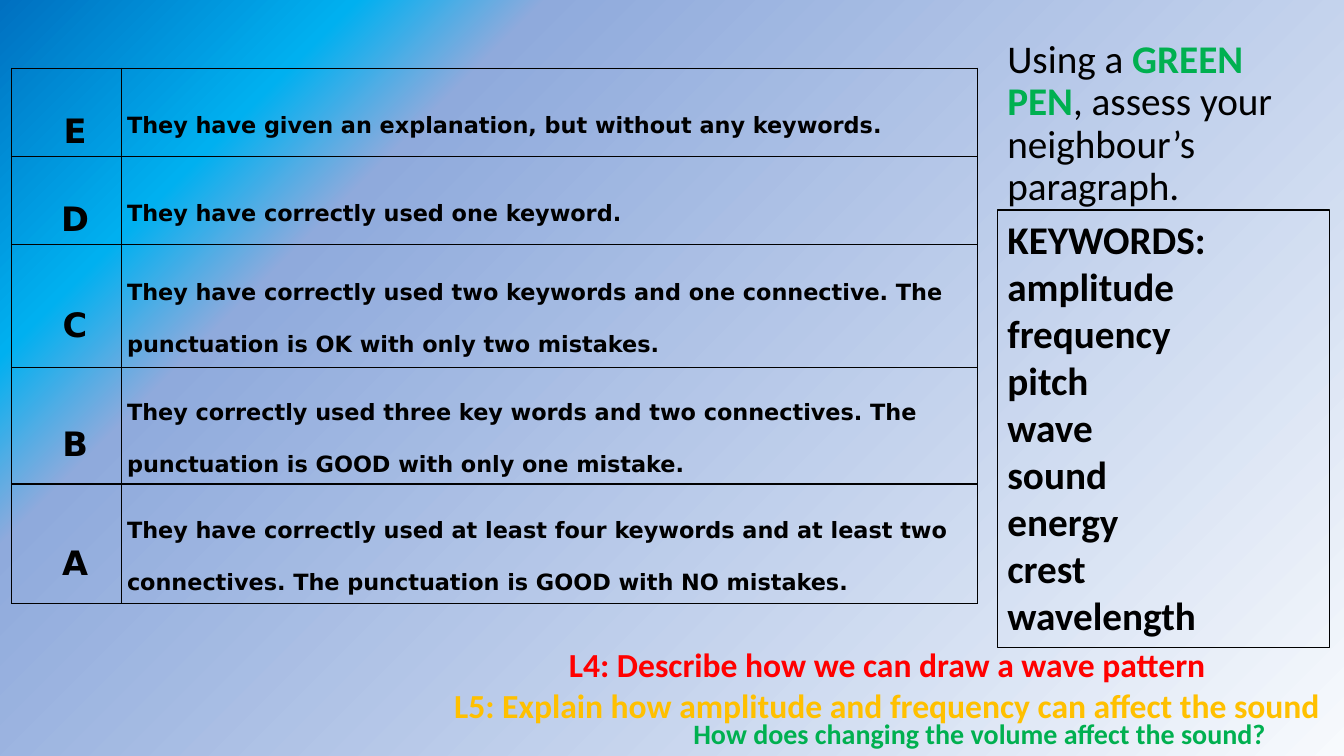
from dataclasses import dataclass

from pptx import Presentation
from pptx.dml.color import RGBColor
from pptx.enum.shapes import MSO_SHAPE
from pptx.enum.text import MSO_ANCHOR, PP_ALIGN
from pptx.oxml import parse_xml
from pptx.oxml.ns import nsdecls
from pptx.util import Pt

PX = 9525  # EMU per px, 96 px to the inch
LEFT, CENTER = PP_ALIGN.LEFT, PP_ALIGN.CENTER
TOP, MIDDLE = MSO_ANCHOR.TOP, MSO_ANCHOR.MIDDLE
RECTANGLE = MSO_SHAPE.RECTANGLE
BODY_FONT, TABLE_FONT = "Calibri", "DejaVu Sans"

COLORS = {
    "black": "000000",
    "red": "FF0000",
    "amber": "FFC000",
    "green": "00B050",
}
BACKGROUND_STOPS = {0: "F7FAFD", 74: "8FAADC", 83: "00B0F0", 100: "0070C0"}


@dataclass(frozen=True)
class Area:
    left: int
    top: int
    width: int
    height: int

    def emu(self) -> tuple[int, ...]:
        return tuple(n * PX for n in (self.left, self.top, self.width, self.height))


@dataclass(frozen=True)
class Span:
    text: str
    color: str = "black"
    bold: bool = True


@dataclass(frozen=True)
class TextBlock:
    area: Area
    size: int
    lines: list[list[Span]]
    align: PP_ALIGN = LEFT
    anchor: MSO_ANCHOR = TOP
    spacing: float = 1.0
    framed: bool = False


@dataclass(frozen=True)
class Grade:
    letter: str
    criterion: str
    height: int


GRADES = [
    Grade("E", "They have given an explanation, but without any keywords.", 84),
    Grade("D", "They have correctly used one keyword.", 84),
    Grade("C", "They have correctly used two keywords and one connective. "
               "The punctuation is OK with only two mistakes.", 117),
    Grade("B", "They correctly used three key words and two connectives. "
               "The punctuation is GOOD with only one mistake.", 111),
    Grade("A", "They have correctly used at least four keywords and at least two "
               "connectives. The punctuation is GOOD with NO mistakes.", 114),
]
GRADE_COLUMNS = (105, 815)

KEYWORDS = ["KEYWORDS:", "amplitude", "frequency", "pitch", "wave",
            "sound", "energy", "crest", "wavelength"]

INSTRUCTION = TextBlock(
    Area(950, 33, 279, 211), 28,
    [[Span("Using a ", bold=False), Span("GREEN PEN", "green"),
      Span(", assess your neighbour’s paragraph.", bold=False)]],
    spacing=0.9)
OBJECTIVES = TextBlock(
    Area(409, 609, 872, 87), 24,
    [[Span("L4: Describe how we can draw a wave pattern", "red")],
     [Span("L5: Explain how amplitude and frequency can affect the sound", "amber")]],
    align=CENTER)
KEYWORD_LIST = TextBlock(
    Area(950, 200, 316, 417), 28, [[Span(word)] for word in KEYWORDS], framed=True)
QUESTION = TextBlock(
    Area(540, 688, 786, 25), 20,
    [[Span("How does changing the volume affect the sound?", "green")]],
    align=CENTER, anchor=MIDDLE, spacing=0.9)


def rgb(name: str) -> RGBColor:
    return RGBColor.from_string(COLORS[name])


def set_background(page) -> None:
    """Fill the page with a circular gradient centred on the bottom right corner."""
    stops = "".join(
        f'<a:gs pos="{percent * 1000}"><a:srgbClr val="{color}"/></a:gs>'
        for percent, color in BACKGROUND_STOPS.items())
    page.element.cSld.insert(0, parse_xml(
        f'<p:bg {nsdecls("p", "a")}><p:bgPr><a:gradFill rotWithShape="1">'
        f'<a:gsLst>{stops}</a:gsLst><a:path path="circle">'
        '<a:fillToRect l="100000" t="100000"/></a:path></a:gradFill>'
        '<a:effectLst/></p:bgPr></p:bg>'))


def add_text(page, block: TextBlock) -> None:
    if block.framed:
        box = page.shapes.add_shape(RECTANGLE, *block.area.emu())
        box.shadow.inherit = False
        box.fill.background()
        box.line.color.rgb = rgb("black")
        box.line.width = Pt(0.75)
    else:
        box = page.shapes.add_textbox(*block.area.emu())
    frame = box.text_frame
    frame.word_wrap = True
    frame.vertical_anchor = block.anchor
    for index, line in enumerate(block.lines):
        para = frame.add_paragraph() if index else frame.paragraphs[0]
        para.alignment = block.align
        para.line_spacing = block.spacing
        para.font.name = BODY_FONT
        para.font.size = Pt(block.size)
        for span in line:
            run = para.add_run()
            run.text = span.text
            run.font.bold = span.bold
            run.font.color.rgb = rgb(span.color)


def add_borders(cell) -> None:
    properties = cell._tc.get_or_add_tcPr()
    for index, side in enumerate(("lnL", "lnR", "lnT", "lnB")):
        properties.insert(index, parse_xml(
            f'<a:{side} {nsdecls("a")} w="12700"><a:solidFill>'
            f'<a:srgbClr val="{COLORS["black"]}"/></a:solidFill></a:{side}>'))


def fill_cell(cell, text: str, size: int, align: PP_ALIGN, left_margin: int) -> None:
    cell.fill.background()
    add_borders(cell)
    cell.vertical_anchor = MIDDLE
    cell.margin_left, cell.margin_right = left_margin * PX, 5 * PX
    cell.margin_top = cell.margin_bottom = 0
    cell.text = text
    para = cell.text_frame.paragraphs[0]
    para.alignment = align
    para.line_spacing = 2.0
    para.font.name = TABLE_FONT
    para.font.size = Pt(size)
    para.font.bold = True
    para.font.color.rgb = rgb("black")


def add_grades(page) -> None:
    area = Area(11, 65, sum(GRADE_COLUMNS), sum(grade.height for grade in GRADES))
    table = page.shapes.add_table(len(GRADES), len(GRADE_COLUMNS), *area.emu()).table
    table.first_row = table.horz_banding = False
    for column, width in zip(table.columns, GRADE_COLUMNS):
        column.width = width * PX
    for row, grade in zip(table.rows, GRADES):
        row.height = grade.height * PX
        fill_cell(row.cells[0], grade.letter, 24, CENTER, 21)
        fill_cell(row.cells[1], grade.criterion, 16, LEFT, 5)


def main() -> None:
    deck = Presentation()
    deck.slide_width, deck.slide_height = 1280 * PX, 720 * PX
    page = deck.slides.add_slide(deck.slide_layouts[6])
    set_background(page)
    add_text(page, INSTRUCTION)
    add_grades(page)
    for block in (OBJECTIVES, KEYWORD_LIST, QUESTION):
        add_text(page, block)
    deck.save("out.pptx")


if __name__ == "__main__":
    main()
